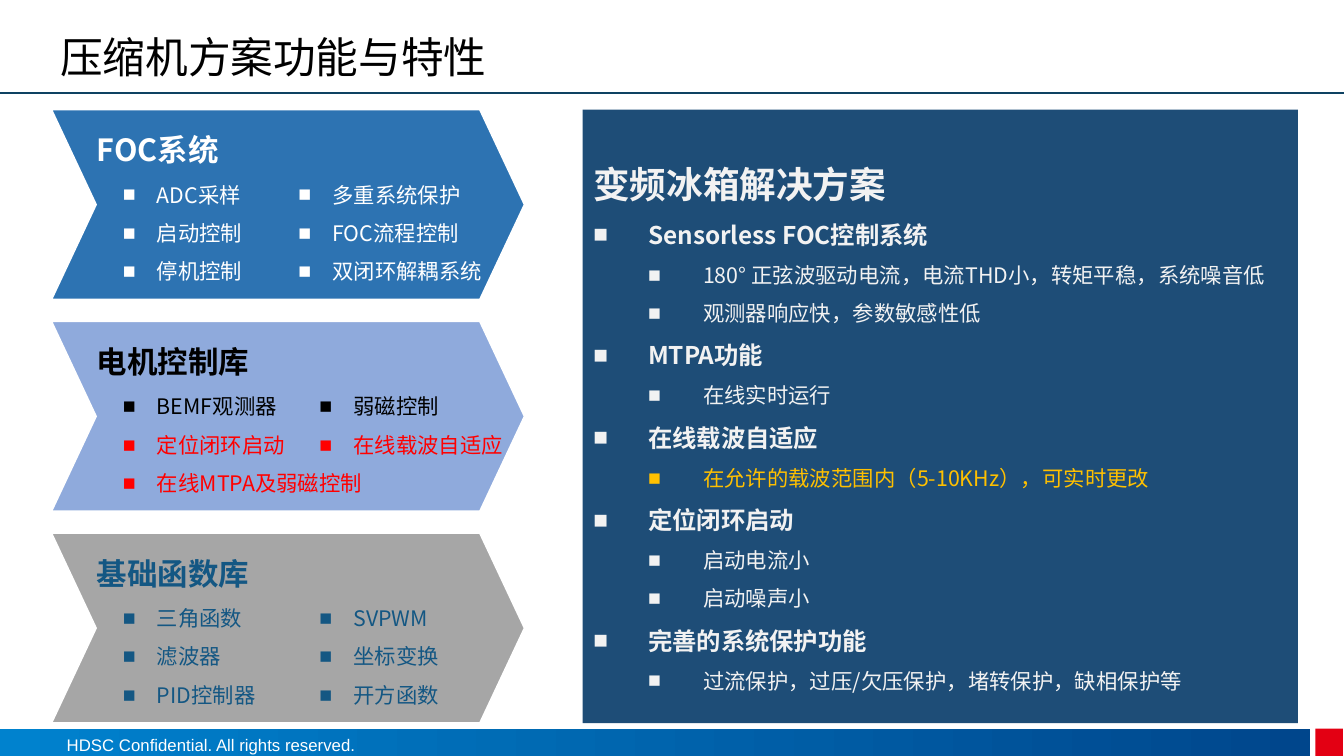
from lxml import etree
from pptx import Presentation
from pptx import util as u
from pptx.dml.color import RGBColor
from pptx.enum import shapes, text
from pptx.oxml.ns import qn

CJK = "Noto Sans CJK SC"
PALE, GOLD, RED = "F2F2F2", "FFC000", "FF0000"
TIGHT = (0.09, 0.03, 0.03, 0.03)
NORMAL = (0.1, 0.05, 0.1, 0.05)


def rgb(value):
    return RGBColor.from_string(value)


def assign(target, values):
    for name, value in values.items():
        setattr(target, name, value)


class Deck:
    def __init__(self, width, height):
        self.prs = Presentation()
        assign(self.prs, {"slide_width": u.Inches(width), "slide_height": u.Inches(height)})
        self.slide = self.prs.slides.add_slide(self.prs.slide_layouts[5])
        self.shapes = self.slide.shapes

    def group(self):
        self.shapes = self.slide.shapes.add_group_shape().shapes

    def ungroup(self):
        self.shapes = self.slide.shapes

    def frame(self, sp, insets=NORMAL, anchor=text.MSO_ANCHOR.TOP):
        tf = sp.text_frame
        sides = ("margin_left", "margin_top", "margin_right", "margin_bottom")
        assign(tf, dict(zip(sides, map(u.Inches, insets))))
        assign(tf, {"word_wrap": True, "vertical_anchor": anchor})
        return tf

    def fill_line(self, p, words, size, color, font=CJK, bold=False, spacing=1.5, indent=None, hang=0.0):
        if indent is not None:
            pPr = p._p.get_or_add_pPr()
            pPr.set("marL", str(u.Inches(indent)))
            pPr.set("indent", str(-u.Inches(hang)))
            etree.SubElement(pPr, qn("a:buFont"), typeface="Arial")
            etree.SubElement(pPr, qn("a:buChar"), char="■")
        assign(p, {"alignment": text.PP_ALIGN.LEFT, "line_spacing": spacing,
                   "space_before": u.Pt(0), "space_after": u.Pt(0)})
        r = p.add_run()
        r.text = words
        assign(r.font, {"size": u.Pt(size), "bold": bold, "name": font})
        r.font.color.rgb = rgb(color)
        etree.SubElement(r._r.get_or_add_rPr(), qn("a:ea"), typeface=font)

    def title(self, box, words):
        sp = self.slide.shapes.title
        assign(sp, dict(zip(("left", "top", "width", "height"), map(u.Inches, box))))
        tf = self.frame(sp, anchor=text.MSO_ANCHOR.MIDDLE)
        self.fill_line(tf.paragraphs[0], words, 28, "000000", spacing=0.9)

    def shape(self, kind, box, fill, line=None):
        sp = self.shapes.add_shape(kind, *map(u.Inches, box))
        sp.shadow.inherit = False
        if isinstance(fill, tuple):
            sp.fill.gradient()
            sp.fill.gradient_angle = 0
            for stop, color in zip(sp.fill.gradient_stops, fill):
                stop.color.rgb = rgb(color)
        else:
            sp.fill.solid()
            sp.fill.fore_color.rgb = rgb(fill)
        if line:
            sp.line.color.rgb = rgb(line)
            sp.line.width = u.Pt(1)
        else:
            sp.line.fill.background()
        return sp

    def rule(self, y, width, color):
        sp = self.shapes.add_connector(shapes.MSO_CONNECTOR.STRAIGHT, 0, u.Inches(y),
                                       u.Inches(width), u.Inches(y))
        sp.line.color.rgb = rgb(color)
        sp.line.width = u.Pt(1.5)
        etree.SubElement(sp._element.spPr, qn("a:effectLst"))

    def label(self, box, words, size, color, insets=TIGHT, **style):
        tf = self.frame(self.shapes.add_textbox(*map(u.Inches, box)), insets)
        self.fill_line(tf.paragraphs[0], words, size, color, **style)

    def bullets(self, box, items):
        tf = self.frame(self.shapes.add_textbox(*map(u.Inches, box)), TIGHT)
        for i, (words, color) in enumerate(items):
            p = tf.add_paragraph() if i else tf.paragraphs[0]
            self.fill_line(p, words, 14, color, indent=0.31, hang=0.31)

    def chevron(self, top, fill, color, heading, columns):
        self.group()
        sp = self.shape(shapes.MSO_SHAPE.CHEVRON, (0.47, top, 4.31, 1.73), fill, "FFFFFF")
        sp.adjustments[0] = 0.235
        self.label((0.79, top, 3.62, 0.63), heading, 20, color, bold=True)
        for left, width, items in columns:
            self.bullets((left, top + 0.51, width, 1.34),
                         [i if isinstance(i, tuple) else (i, color) for i in items])
        self.ungroup()

    def panel(self, box, fill, heading, sections):
        tf = self.frame(self.shape(shapes.MSO_SHAPE.RECTANGLE, box, fill),
                        anchor=text.MSO_ANCHOR.MIDDLE)
        self.fill_line(tf.paragraphs[0], heading, 24, PALE, bold=True)
        for topic, color, details in sections:
            self.fill_line(tf.add_paragraph(), topic, 16, PALE, bold=True, indent=0.5, hang=0.5)
            for detail in details:
                p = tf.add_paragraph()
                p.level = 1
                self.fill_line(p, detail, 14, color, indent=1, hang=0.5)


LIBRARIES = [
    ("2D73B2", "FFFFFF", "FOC系统", [
        (1.03, 1.78, ["ADC采样", "启动控制", "停机控制"]),
        (2.63, 1.96, ["多重系统保护", "FOC流程控制", "双闭环解耦系统"])]),
    ("8FAADC", "000000", "电机控制库", [
        (1.03, 2.42, ["BEMF观测器", ("定位闭环启动", RED), ("在线MTPA及弱磁控制", RED)]),
        (2.82, 1.91, ["弱磁控制", ("在线载波自适应", RED)])]),
    ("A6A6A6", "145783", "基础函数库", [
        (1.03, 1.78, ["三角函数", "滤波器", "PID控制器"]),
        (2.82, 1.78, ["SVPWM", "坐标变换", "开方函数"])]),
]

FEATURES = [
    ("Sensorless FOC控制系统", PALE,
     ["180° 正弦波驱动电流，电流THD小，转矩平稳，系统噪音低", "观测器响应快，参数敏感性低"]),
    ("MTPA功能", PALE, ["在线实时运行"]),
    ("在线载波自适应", GOLD, ["在允许的载波范围内（5-10KHz），可实时更改"]),
    ("定位闭环启动", PALE, ["启动电流小", "启动噪声小"]),
    ("完善的系统保护功能", PALE, ["过流保护，过压/欠压保护，堵转保护，缺相保护等"]),
]


def main():
    deck = Deck(12.25, 6.89)
    rect = shapes.MSO_SHAPE.RECTANGLE
    deck.shape(rect, (0, 6.64, 11.94, 0.25), ("0082CE", "00468C"))
    deck.shape(rect, (11.99, 6.64, 0.25, 0.25), "E30013")
    deck.label((0.51, 6.65, 5.98, 0.29), "HDSC Confidential. All rights reserved.", 11, "FFFFFF",
               insets=NORMAL, font="Arial", spacing=1)
    deck.rule(0.85, 12.25, "0E4262")
    deck.title((0.45, 0.24, 9.59, 0.6), "压缩机方案功能与特性")
    for i, library in enumerate(LIBRARIES):
        deck.chevron(1 + 1.93 * i, *library)
    deck.panel((5.31, 1, 6.52, 5.59), "1E4D77", "变频冰箱解决方案", FEATURES)
    deck.prs.save("out.pptx")


if __name__ == "__main__":
    main()
